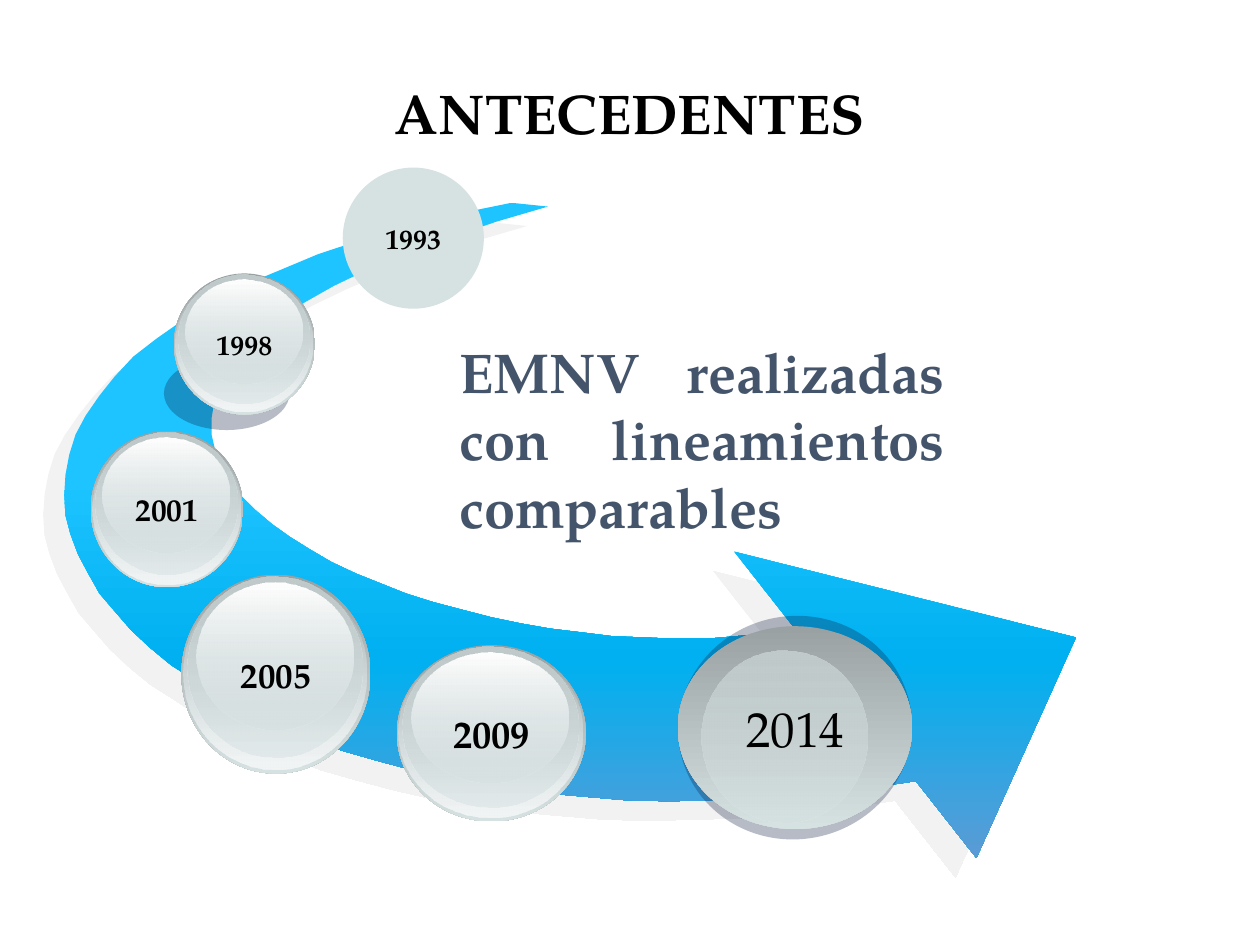
from dataclasses import dataclass

from lxml import etree
from pptx import Presentation
from pptx import util as u
from pptx.dml.color import RGBColor
from pptx.enum import shapes, text
from pptx.oxml import ns

CELL = u.Inches(0.1)
COLUMNS, ROWS = 100, 75
FONT = "TeX Gyre Pagella"

BLACK = RGBColor(0x00, 0x00, 0x00)
WHITE = RGBColor(0xFF, 0xFF, 0xFF)
SLATE = RGBColor(0x44, 0x54, 0x6A)
SHADE = RGBColor(0x0F, 0x21, 0x45)
SKY = RGBColor(0x1D, 0xC4, 0xFF)
AZURE = RGBColor(0x00, 0xB0, 0xF0)
STEEL = RGBColor(0x5B, 0x9B, 0xD5)
ASH = RGBColor(0x99, 0xA1, 0xA2)
SILVER = RGBColor(0xC1, 0xCB, 0xCC)
MIST = RGBColor(0xD6, 0xE1, 0xE2)
PEARL = RGBColor(0xF2, 0xF5, 0xF5)
SHADOW = RGBColor(0xE7, 0xE6, 0xE6)

RIM = [(0, ASH, 100), (100, MIST, 100)]
GLOW = [(0, MIST, 0), (100, PEARL, 100)]
BODY = [(0, SILVER, 100), (100, MIST, 48)]
SHINE = [(0, WHITE, 100), (100, MIST, 38)]
FLAT = [(0, MIST, 100)]
DARK = [(0, SHADE, 30)]
SWEEP = [(42, SKY, 100), (70, AZURE, 100), (100, STEEL, 100)]

WHOLE = (0, 0, 1, 1)
GLASS = [
    (WHOLE, RIM, 0),
    ((0.01, 0.01, 0.97, 0.97), GLOW, 0),
    ((0.03, 0.01, 0.93, 0.91), BODY, 0),
    ((0.08, 0.04, 0.83, 0.74), SHINE, 0),
]
SHADED_GLASS = [((-0.07, 0.59, 0.89, 0.52), DARK, 0)] + GLASS
LARGE = [
    ((0, -0.05, 1, 1.1), DARK, -12),
    (WHOLE, RIM, 0),
    ((0.1, 0.12, 0.71, 0.85), BODY, 0),
]
PLAIN = [(WHOLE, FLAT, 0)]

OUTER_CURVE = [
    (355, 0), (311, 9), (271, 19), (234, 30), (201, 41), (170, 54), (141, 66),
    (116, 80), (93, 94), (73, 108), (55, 122), (40, 138), (28, 153), (17, 169),
    (9, 184), (4, 200), (1, 216), (0, 232), (1, 248), (5, 263), (11, 279),
    (19, 294), (28, 310), (40, 324), (53, 339), (68, 353), (85, 367),
    (104, 379), (124, 392), (146, 404), (170, 415), (195, 425), (221, 435),
    (249, 443), (279, 451), (310, 458), (341, 463), (375, 468), (409, 471),
    (444, 474), (480, 475), (518, 474), (556, 473), (595, 470), (635, 465),
    (676, 459),
]
ARROWHEAD = [(724, 520), (803, 345), (532, 277), (580, 338)]
INNER_CURVE = [
    (557, 342), (533, 344), (510, 346), (485, 346), (461, 345), (435, 344),
    (411, 341), (386, 338), (363, 334), (339, 329), (316, 323), (293, 317),
    (271, 310), (251, 302), (231, 294), (212, 285), (195, 275), (179, 265),
    (165, 255), (152, 244), (141, 233), (132, 221), (125, 209), (120, 197),
    (117, 184), (117, 171), (119, 159), (124, 146), (131, 132), (142, 119),
    (155, 106), (172, 92), (191, 79), (214, 66), (241, 53), (271, 40),
    (305, 28), (343, 15), (384, 3),
]


@dataclass
class Box:
    """Area measured in grid columns and rows."""

    left: float
    top: float
    width: float
    height: float

    def inner(self, left, top, width, height):
        """Return the area at the given shares of this one."""
        return Box(self.left + left * self.width, self.top + top * self.height,
                   width * self.width, height * self.height)

    def lengths(self):
        """Return left, top, width and height as slide lengths."""
        return [round(side * CELL)
                for side in (self.left, self.top, self.width, self.height)]


YEARS = [
    ("2014", Box(53.8, 49.7, 18.6, 16.1), LARGE, 28, False),
    ("2009", Box(31.5, 51.2, 15, 14), GLASS, 22, True),
    ("1998", Box(13.8, 21.7, 11.2, 11.2), SHADED_GLASS, 16, True),
    ("2001", Box(7.2, 34.2, 12.1, 12.4), GLASS, 18, True),
    ("2005", Box(14.4, 45.6, 15, 15.8), GLASS, 20, True),
    ("1993", Box(27.2, 13.3, 11.2, 11.2), PLAIN, 16, True),
]


def add_color(parent, color, opacity):
    """Append a colour with its opacity in percent."""
    node = etree.SubElement(parent, ns.qn("a:srgbClr"), val=str(color))
    etree.SubElement(node, ns.qn("a:alpha"), val=str(opacity * 1000))


def paint(shape, stops):
    """Fill a borderless shape with one colour or a downward gradient."""
    shape.shadow.inherit = False
    shape.line.fill.background()
    kind = "a:gradFill" if len(stops) > 1 else "a:solidFill"
    fill = etree.Element(ns.qn(kind))
    if len(stops) == 1:
        add_color(fill, *stops[0][1:])
    else:
        steps = etree.SubElement(fill, ns.qn("a:gsLst"))
        for place, color, opacity in stops:
            step = etree.SubElement(steps, ns.qn("a:gs"), pos=str(place * 1000))
            add_color(step, color, opacity)
        etree.SubElement(fill, ns.qn("a:lin"), ang="5400000", scaled="0")
    shape.element.spPr.insert(2, fill)


def write(frame, words, size, color, bold, align):
    """Put one formatted paragraph in a text frame."""
    frame.text = words
    para = frame.paragraphs[0]
    para.alignment = align
    para.font.name, para.font.size = FONT, u.Pt(size)
    para.font.color.rgb, para.font.bold = color, bold
    return para


def add_title(page, box):
    """Place the slide title."""
    title = page.shapes.title
    title.left, title.top, title.width, title.height = box.lengths()
    title.text_frame.vertical_anchor = text.MSO_ANCHOR.MIDDLE
    para = write(title.text_frame, "ANTECEDENTES", 32, BLACK, True, text.PP_ALIGN.CENTER)
    para.line_spacing = 0.9


def add_arrow(page, box):
    """Draw the sweeping arrow with its offset shadow."""
    points = OUTER_CURVE + ARROWHEAD + INNER_CURVE
    left, top, width, height = box.lengths()
    scale = (width / max(x for x, y in points), height / max(y for x, y in points))
    outline = page.shapes.build_freeform(*points[0], scale=scale)
    outline.add_line_segments(points[1:])
    arrow = outline.convert_to_shape(left, top)
    paint(arrow, SWEEP)
    effects = arrow.element.spPr.find(ns.qn("a:effectLst"))
    shadow = etree.SubElement(effects, ns.qn("a:outerShdw"), blurRad="0",
                              dist=str(u.Pt(16.3)), dir=str(137 * 60000),
                              algn="ctr", rotWithShape="0")
    add_color(shadow, SHADOW, 50)


def add_message(page, box):
    """Place the statement inside the curve."""
    frame = page.shapes.add_textbox(*box.lengths()).text_frame
    frame.word_wrap = True
    frame.auto_size = text.MSO_AUTO_SIZE.SHAPE_TO_FIT_TEXT
    write(frame, "EMNV realizadas con lineamientos comparables", 32, SLATE, True,
          text.PP_ALIGN.JUSTIFY)


def add_year(page, box, year, layers, size, bold):
    """Build one ball from its layers and centre the year on it."""
    ball = page.shapes.add_group_shape()
    for shares, stops, turn in layers:
        disc = ball.shapes.add_shape(shapes.MSO_SHAPE.OVAL, *box.inner(*shares).lengths())
        disc.rotation = turn
        paint(disc, stops)
    width, height = 2 + size * 0.28, 1 + size / 6
    label = Box(box.left + (box.width - width) / 2,
                box.top + (box.height - height) / 2, width, height)
    frame = ball.shapes.add_textbox(*label.lengths()).text_frame
    frame.word_wrap = False
    frame.auto_size = text.MSO_AUTO_SIZE.SHAPE_TO_FIT_TEXT
    write(frame, year, size, BLACK, bold, text.PP_ALIGN.CENTER)


def main():
    """Build and save the deck."""
    deck = Presentation()
    deck.slide_width, deck.slide_height = COLUMNS * CELL, ROWS * CELL
    page = deck.slides.add_slide(deck.slide_layouts[5])
    add_title(page, Box(5, 6.3, 90, 5.9))
    add_arrow(page, Box(5.1, 16.1, 80.3, 52))
    add_message(page, Box(35.5, 26.3, 40.5, 17.2))
    for year, box, layers, size, bold in YEARS:
        add_year(page, box, year, layers, size, bold)
    deck.save("out.pptx")


if __name__ == "__main__":
    main()
